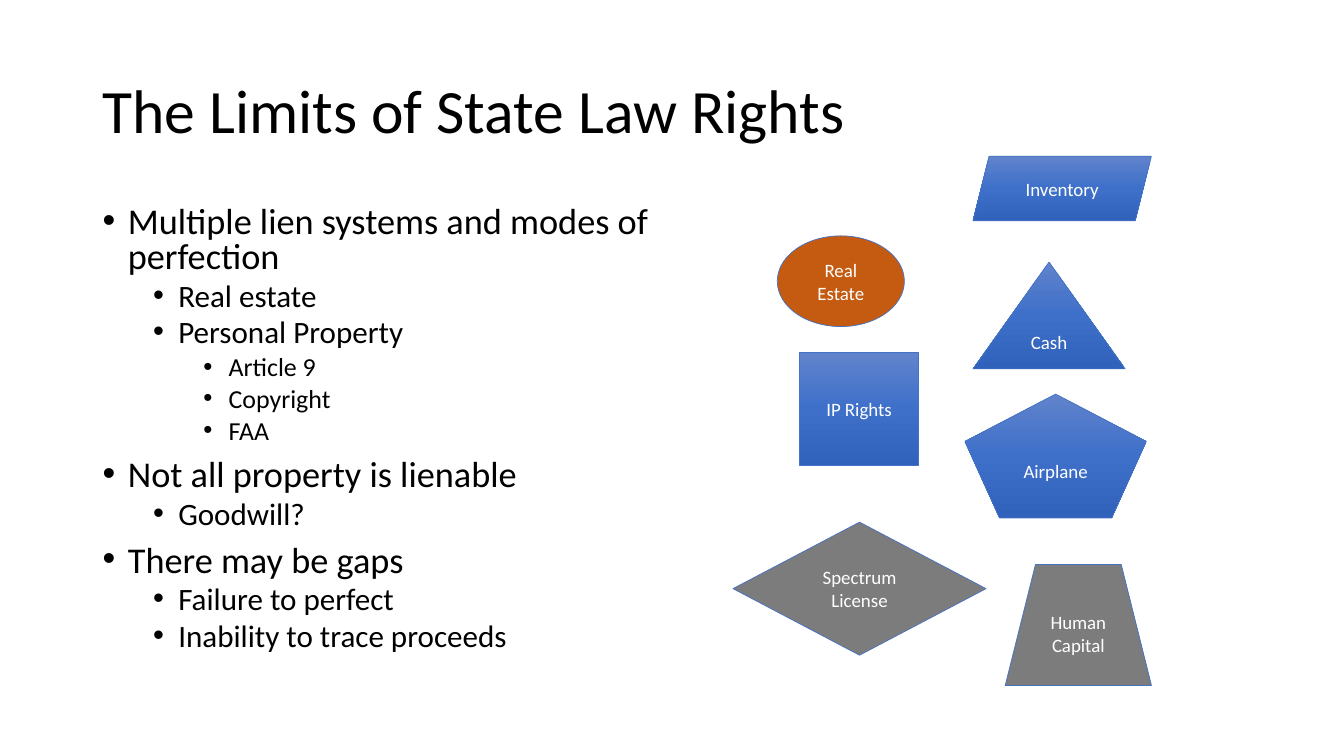
from copy import deepcopy
from typing import NamedTuple

from lxml import etree
from pptx import Presentation
from pptx.dml.color import RGBColor
from pptx.enum import shapes, text
from pptx.oxml import ns
from pptx.util import Inches, Pt

FONT = "Calibri"
BLACK, WHITE = "000000", "FFFFFF"
OUTLINE, ORANGE, GRAY = "4472C4", "C55A11", "7C7C7C"
BLUE_GRADIENT = ("6183CB", "3E70CA", "3062BB")
SHAPE = shapes.MSO_SHAPE


class Asset(NamedTuple):
    label: str
    preset: shapes.MSO_SHAPE
    left: float
    top: float
    width: float
    height: float
    fill: str | None = None  # None means the blue gradient


class Level(NamedTuple):
    size: float
    space_before: float


ASSETS = [
    Asset("Real Estate", SHAPE.OVAL, 7.71, 2.34, 1.26, 0.9, ORANGE),
    Asset("Cash", SHAPE.ISOSCELES_TRIANGLE, 9.65, 2.6, 1.51, 1.06),
    Asset("IP Rights", SHAPE.RECTANGLE, 7.93, 3.5, 1.18, 1.12),
    Asset("Airplane", SHAPE.REGULAR_PENTAGON, 9.57, 3.91, 1.8, 1.23),
    Asset("Spectrum License", SHAPE.DIAMOND, 7.27, 5.18, 2.51, 1.32, GRAY),
    Asset("Human Capital", SHAPE.TRAPEZOID, 9.97, 5.6, 1.45, 1.2, GRAY),
    Asset("Inventory", SHAPE.PARALLELOGRAM, 9.65, 1.55, 1.77, 0.64),
]
LEVELS = [Level(25.9, 10), Level(22.2, 5), Level(18.5, 5)]
OUTLINE_POINTS = [
    (0, "Multiple lien systems and modes of perfection"),
    (1, "Real estate"),
    (1, "Personal Property"),
    (2, "Article 9"),
    (2, "Copyright"),
    (2, "FAA"),
    (0, "Not all property is lienable"),
    (1, "Goodwill?"),
    (0, "There may be gaps"),
    (1, "Failure to perfect"),
    (1, "Inability to trace proceeds"),
]


def color(value: str) -> RGBColor:
    return RGBColor.from_string(value)


def style_runs(paragraph, size: float, font_color: str) -> None:
    for run in paragraph.runs:
        run.font.name = FONT
        run.font.size = Pt(size)
        run.font.color.rgb = color(font_color)


def add_text_frame(slide, left: float, top: float, width: float, height: float):
    box = slide.shapes.add_textbox(Inches(left), Inches(top), Inches(width), Inches(height))
    box.text_frame.word_wrap = True
    return box.text_frame


def add_title(slide, wording: str) -> None:
    title = add_text_frame(slide, 0.92, 0.4, 11.5, 1.45)
    title.vertical_anchor = text.MSO_ANCHOR.MIDDLE
    title.text = wording
    title.paragraphs[0].line_spacing = 0.9
    style_runs(title.paragraphs[0], 44, BLACK)


def set_bullet(paragraph, depth: int) -> None:
    """Give the paragraph a bullet and a hanging indent for its depth."""
    properties = paragraph._p.get_or_add_pPr()
    properties.set("marL", str(Inches(0.25 + 0.5 * depth)))
    properties.set("indent", str(-Inches(0.25)))
    etree.SubElement(properties, ns.qn("a:buFont")).set("typeface", "Arial")
    etree.SubElement(properties, ns.qn("a:buChar")).set("char", "•")


def add_outline(slide) -> None:
    body = add_text_frame(slide, 0.92, 2, 5.67, 4.76)
    for index, (depth, wording) in enumerate(OUTLINE_POINTS):
        point = body.add_paragraph() if index else body.paragraphs[0]
        point.text = wording
        point.level = depth
        point.line_spacing = 0.8
        point.space_before = Pt(LEVELS[depth].space_before)
        set_bullet(point, depth)
        style_runs(point, LEVELS[depth].size, BLACK)


def fill_blue_gradient(fill) -> None:
    """Apply the three evenly spaced blues from top to bottom."""
    fill.gradient()
    fill.gradient_angle = 270
    first_stop = fill.gradient_stops[0]._gs
    first_stop.addnext(deepcopy(first_stop))
    for index, (stop, blue) in enumerate(zip(fill.gradient_stops, BLUE_GRADIENT)):
        stop.position = index / 2
        stop.color.rgb = color(blue)


def add_asset(slide, asset: Asset) -> None:
    shape = slide.shapes.add_shape(
        asset.preset, Inches(asset.left), Inches(asset.top),
        Inches(asset.width), Inches(asset.height))
    shape.shadow.inherit = False
    if asset.fill:
        shape.fill.solid()
        shape.fill.fore_color.rgb = color(asset.fill)
    else:
        fill_blue_gradient(shape.fill)
    shape.line.color.rgb = color(OUTLINE)
    shape.line.width = Pt(0.5)
    label = shape.text_frame
    label.word_wrap = True
    label.vertical_anchor = text.MSO_ANCHOR.MIDDLE
    label.text = asset.label
    label.paragraphs[0].alignment = text.PP_ALIGN.CENTER
    style_runs(label.paragraphs[0], 13.5, WHITE)


def main() -> None:
    deck = Presentation()
    deck.slide_width, deck.slide_height = Inches(13.33), Inches(7.5)
    slide = deck.slides.add_slide(deck.slide_layouts[6])
    add_title(slide, "The Limits of State Law Rights")
    add_outline(slide)
    for asset in ASSETS:
        add_asset(slide, asset)
    deck.save("out.pptx")


if __name__ == "__main__":
    main()
